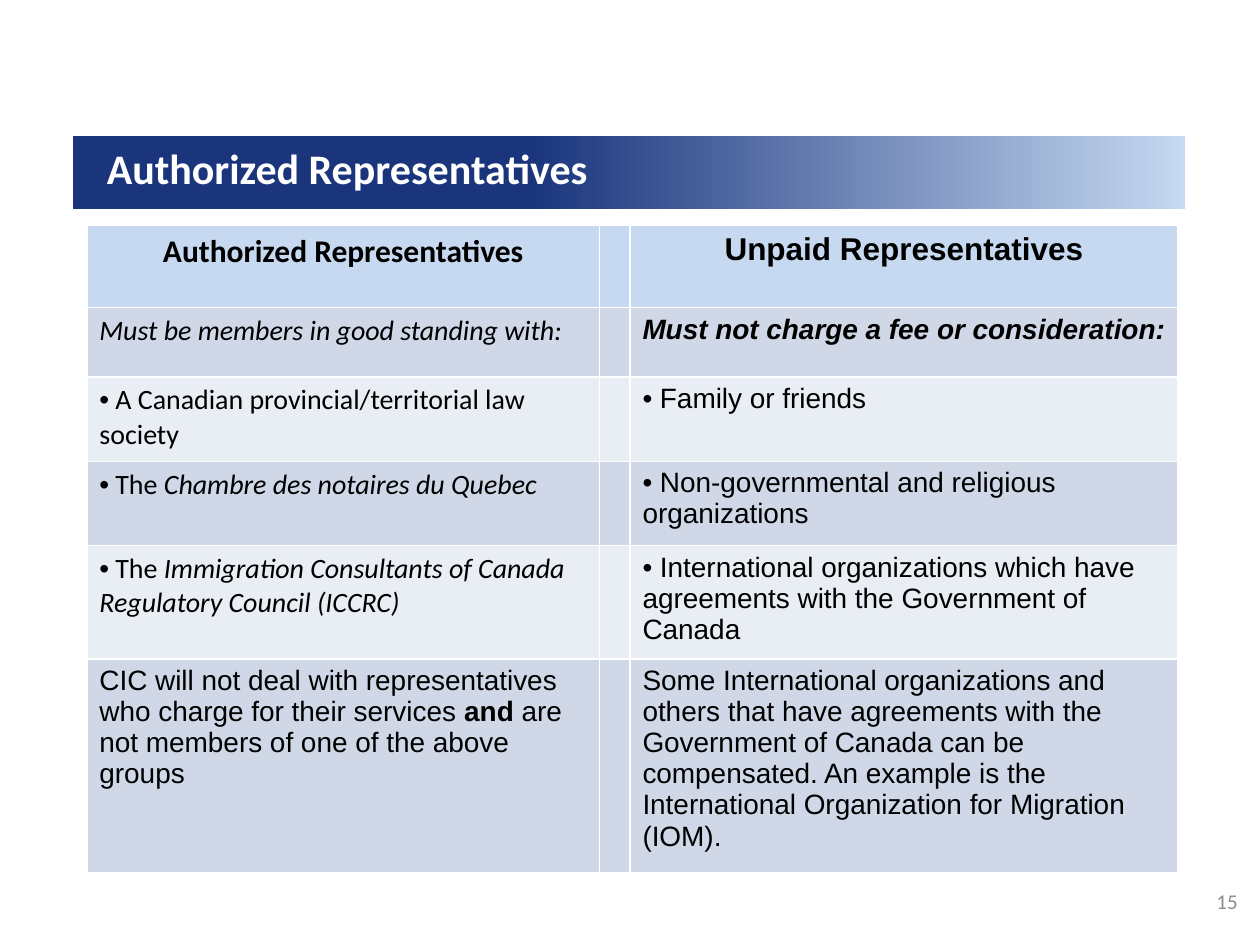
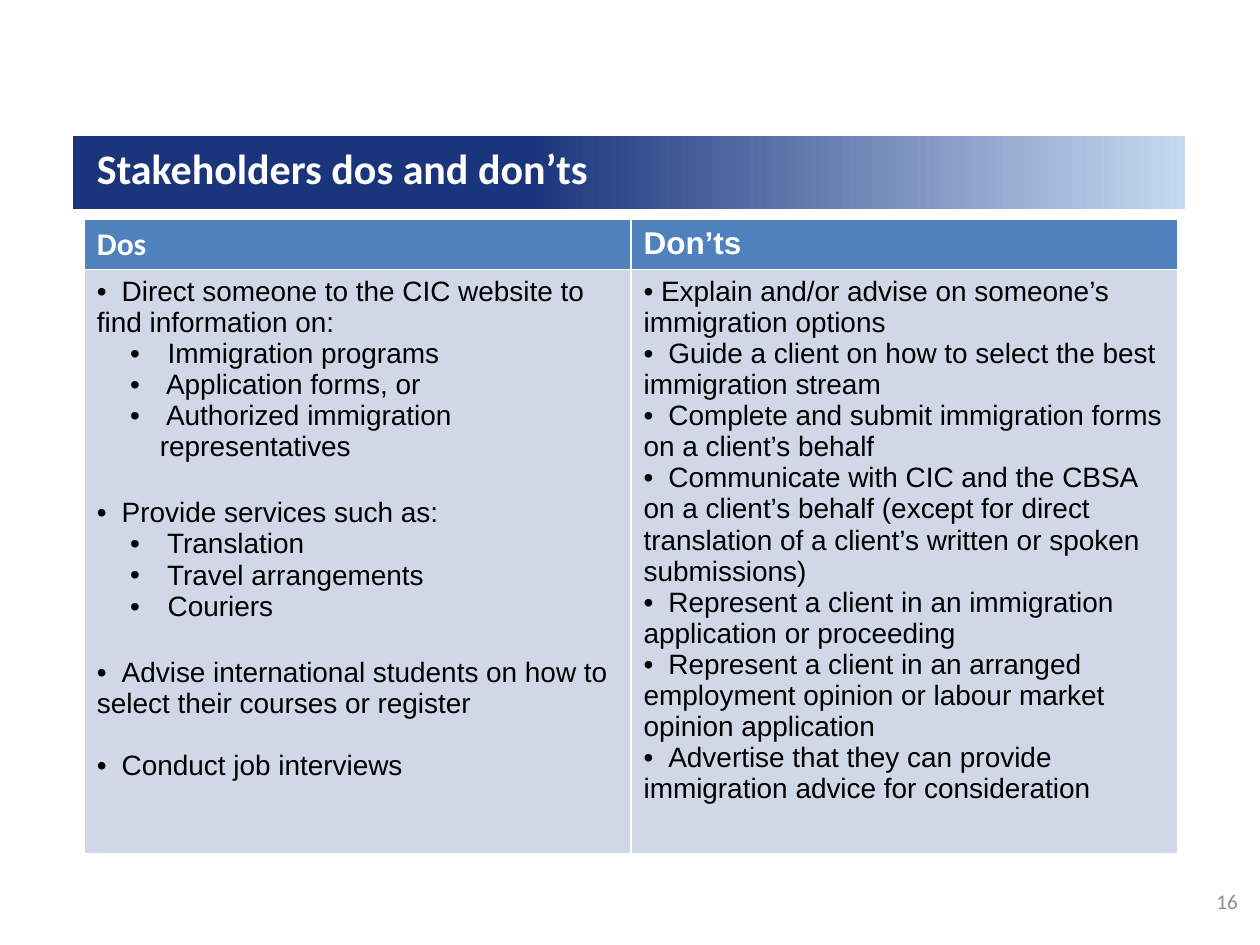
from dataclasses import dataclass

from lxml.etree import SubElement
from pptx import Presentation
from pptx.dml.color import RGBColor
from pptx.enum.shapes import MSO_SHAPE as Shape
from pptx.enum.text import MSO_ANCHOR as Anchor, PP_ALIGN as Align
from pptx.oxml.ns import qn
from pptx.util import Cm, Pt

NAVY, PALE_BLUE, BLUE = "1B357D", "C6D9F1", "4F81BD"
BAND_DARK, BAND_LIGHT = "D0D8E8", "E9EDF4"
WHITE, BLACK, GREY = "FFFFFF", "000000", "8C8C8C"


def rgb(hex_code):
    return RGBColor.from_string(hex_code)


@dataclass
class Para:
    """A paragraph; a run is plain text or a (text, "b" or "i") pair."""
    runs: list
    face: str = "Arial"
    size: int = 16
    color: str = BLACK
    bold: bool = False
    italic: bool = False
    align: Align = Align.LEFT
    bullet: bool = False
    indent: float = 0
    hanging: float = 0
    tab: float = 0
    before: int = 0


def item(*runs, **style):
    return Para(list(runs), bullet=True, **style)


def tabbed(text, **style):
    return item("\t" + text, tab=0.5, **style)


def sub_item(text):
    return item(" " + text, indent=1.27, hanging=0.6)


def heading(text, **style):
    return Para([text], size=18, bold=True, **style)


class Deck:
    def __init__(self):
        self.prs = Presentation()
        self.prs.slide_width, self.prs.slide_height = Cm(25.4), Cm(19.05)
        self.slide = None

    def start_slide(self, title, title_left, number):
        self.slide = self.prs.slides.add_slide(self.prs.slide_layouts[5])
        self.band()
        self.title(title, title_left)
        self.page_number(number)

    def band(self):
        band = self.slide.shapes.add_shape(
            Shape.RECTANGLE, Cm(1.47), Cm(2.74), Cm(22.43), Cm(1.47))
        band.shadow.inherit = False
        band.line.fill.background()
        band.fill.gradient()
        band.fill.gradient_angle = 0
        stops = ((0.41, NAVY), (1, PALE_BLUE))
        for stop, (position, color) in zip(band.fill.gradient_stops, stops):
            stop.position = position
            stop.color.rgb = rgb(color)
        # The band lies behind the title placeholder
        self.slide.shapes._spTree.insert(2, band._element)

    def title(self, text, left):
        title = self.slide.shapes.title
        title.left, title.top = Cm(left), Cm(2.54)
        title.width, title.height = Cm(22.23), Cm(1.7)
        self.set_line(title.text_frame, Para(
            [text], face="Calibri", size=24, color=WHITE, bold=True))

    def page_number(self, number):
        box = self.slide.shapes.add_textbox(
            Cm(22.86), Cm(17.65), Cm(2.34), Cm(1.02))
        self.set_line(box.text_frame, Para(
            [str(number)], face="Calibri", size=12, color=GREY, align=Align.RIGHT))

    def set_line(self, frame, para):
        frame.word_wrap = True
        frame.vertical_anchor = Anchor.MIDDLE
        self.fill_paragraph(frame.paragraphs[0], para)

    def fill_paragraph(self, paragraph, para):
        paragraph.alignment = para.align
        if para.before:
            paragraph.space_before = Pt(para.before)
        if para.bullet:
            self.add_bullet(paragraph, para)
        font = paragraph.font
        font.name, font.size, font.color.rgb = para.face, Pt(para.size), rgb(para.color)
        mixed = any(isinstance(run, tuple) for run in para.runs)
        if not mixed:
            font.bold, font.italic = para.bold, para.italic
        for part in para.runs:
            text, mark = part if isinstance(part, tuple) else (part, "")
            run = paragraph.add_run()
            run.text = text
            if mixed:
                run.font.bold, run.font.italic = mark == "b", mark == "i"

    def add_bullet(self, paragraph, para):
        props = paragraph._p.get_or_add_pPr()
        props.set("marL", str(Cm(para.indent)))
        props.set("indent", str(-Cm(para.hanging)))
        SubElement(props, qn("a:buFont"), typeface="Arial")
        SubElement(props, qn("a:buChar"), char="•")
        if para.tab:
            tabs = SubElement(props, qn("a:tabLst"))
            SubElement(tabs, qn("a:tab"), pos=str(Cm(para.tab)), algn="l")

    def table(self, left, top, widths, heights, rows, fills):
        """Each cell of rows is a list of Para; fills gives one colour a row."""
        table = self.slide.shapes.add_table(
            len(heights), len(widths), Cm(left), Cm(top),
            Cm(sum(widths)), Cm(sum(heights))).table
        for column, width in zip(table.columns, widths):
            column.width = Cm(width)
        for row, height, cells, fill in zip(table.rows, heights, rows, fills):
            row.height = Cm(height)
            for cell, paras in zip(row.cells, cells):
                cell.fill.solid()
                cell.fill.fore_color.rgb = rgb(fill)
                frame = cell.text_frame
                for i, para in enumerate(paras):
                    self.fill_paragraph(
                        frame.add_paragraph() if i else frame.paragraphs[0], para)


def representatives(deck):
    deck.start_slide("Authorized Representatives", 1.9, 15)
    pairs = [
        (heading("Authorized Representatives", face="Calibri", align=Align.CENTER),
         heading("Unpaid Representatives", align=Align.CENTER)),
        (Para(["Must be members in good standing with:"], face="Calibri", italic=True),
         Para(["Must not charge a fee or consideration:"], bold=True, italic=True)),
        (item(" A Canadian provincial/territorial law society", face="Calibri"),
         item(" Family or friends")),
        (item(" The ", ("Chambre des notaires du Quebec", "i"), face="Calibri"),
         item(" Non-governmental and religious organizations")),
        (item(" The ", ("Immigration Consultants of Canada Regulatory Council (ICCRC)", "i"),
              face="Calibri"),
         item(" International organizations which have agreements with the "
              "Government of Canada")),
        (Para(["CIC will not deal with representatives who charge for their services ",
               ("and", "b"), " are not members of one of the above groups"]),
         Para(["Some International organizations and others that have agreements with "
               "the Government of Canada can be compensated. An example is the "
               "International Organization for Migration (IOM)."])),
    ]
    deck.table(1.75, 4.55, [10.34, 0.58, 11.05], [1.65, 1.4, 1.7, 1.7, 2.08, 3.78],
               [([authorized], [], [unpaid]) for authorized, unpaid in pairs],
               [PALE_BLUE] + [BAND_DARK, BAND_LIGHT] * 2 + [BAND_DARK])


def dos_and_donts(deck):
    deck.start_slide("Stakeholders dos and don’ts", 1.7, 16)
    dos = [
        tabbed("Direct someone to the CIC website to find information on:"),
        sub_item("Immigration programs"),
        sub_item("Application forms, or"),
        sub_item("Authorized immigration representatives"),
        tabbed("Provide services such as:", before=20),
        sub_item("Translation"),
        sub_item("Travel arrangements"),
        sub_item("Couriers"),
        tabbed("Advise international students on how to select their courses or register",
               before=20),
        tabbed("Conduct job interviews", before=18),
    ]
    donts = [item(" Explain and/or advise on someone’s immigration options")]
    donts += [tabbed(text) for text in (
        "Guide a client on how to select the best immigration stream",
        "Complete and submit immigration forms on a client’s behalf",
        "Communicate with CIC and the CBSA on a client’s behalf (except for direct "
        "translation of a client’s written or spoken submissions)",
        "Represent a client in an immigration application or proceeding",
        "Represent a client in an arranged employment opinion or labour market "
        "opinion application",
        "Advertise that they can provide immigration advice for consideration",
    )]
    headings = ([heading("Dos", face="Calibri", color=WHITE)],
                [heading("Don’ts", color=WHITE)])
    deck.table(1.7, 4.42, [11.02] * 2, [0.99, 11.58],
               [headings, (dos, donts)], [BLUE, BAND_DARK])


def main():
    deck = Deck()
    representatives(deck)
    dos_and_donts(deck)
    deck.prs.save("out.pptx")


if __name__ == "__main__":
    main()
